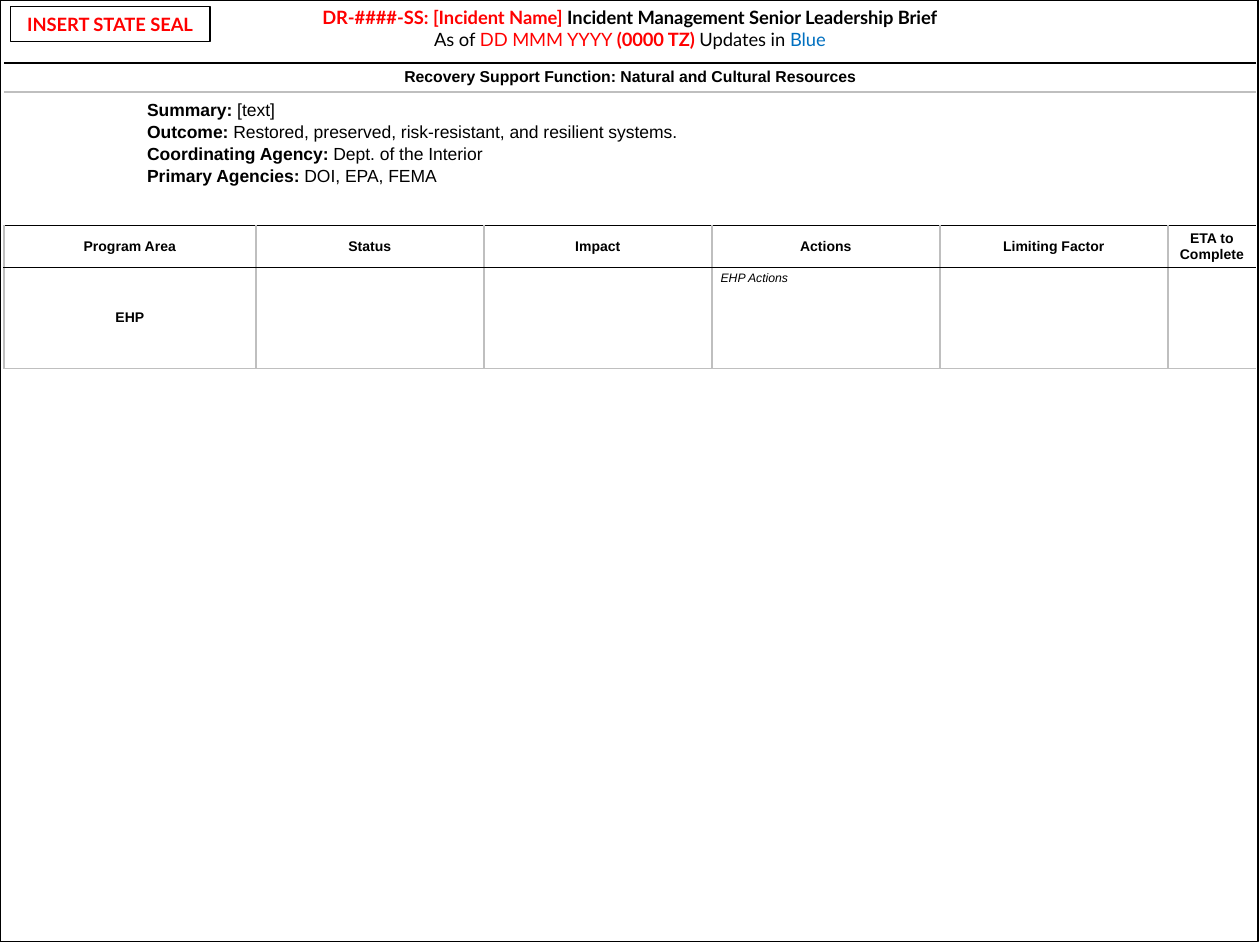
from lxml import etree
from pptx import Presentation
from pptx.dml.color import RGBColor
from pptx.enum import shapes, text
from pptx.oxml import ns
from pptx.util import Pt

BLACK = RGBColor(0x00, 0x00, 0x00)
RED = RGBColor(0xFF, 0x00, 0x00)
BLUE = RGBColor(0x00, 0x70, 0xC0)
GRAY = RGBColor(0xBF, 0xBF, 0xBF)
CENTER = text.PP_ALIGN.CENTER
LEFT = text.PP_ALIGN.LEFT
MIDDLE = text.MSO_ANCHOR.MIDDLE
TOP = text.MSO_ANCHOR.TOP


def write_text(frame, paragraphs, font="Arial", size=10, align=LEFT, anchor=TOP,
               italic=False, spacing=None):
    """Fill a text frame with paragraphs made of (words, bold, color) runs."""
    frame.word_wrap = True
    frame.vertical_anchor = anchor
    for index, runs in enumerate(paragraphs):
        paragraph = frame.add_paragraph() if index else frame.paragraphs[0]
        paragraph.alignment = align
        if spacing:
            paragraph.line_spacing = spacing
        for words, bold, color in runs:
            run = paragraph.add_run()
            run.text = words
            run.font.name = font
            run.font.size = Pt(size)
            run.font.bold = bold
            run.font.italic = italic
            run.font.color.rgb = color


def add_text_box(slide, left, top, width, height, paragraphs, **text_format):
    """Add a text box holding formatted paragraphs."""
    box = slide.shapes.add_textbox(Pt(left), Pt(top), Pt(width), Pt(height))
    write_text(box.text_frame, paragraphs, **text_format)


def add_outline(slide, left, top, width, height, weight):
    """Add an unfilled rectangle with a black outline and return it."""
    shape = slide.shapes.add_shape(
        shapes.MSO_SHAPE.RECTANGLE, Pt(left), Pt(top), Pt(width), Pt(height))
    shape.shadow.inherit = False
    shape.fill.background()
    shape.line.color.rgb = BLACK
    shape.line.width = Pt(weight)
    return shape


def set_borders(cell, left=None, right=None, top=None, bottom=None):
    """Draw one-point borders in the given colors and hide the others."""
    properties = cell._tc.get_or_add_tcPr()
    sides = {"lnL": left, "lnR": right, "lnT": top, "lnB": bottom}
    for position, (tag, color) in enumerate(sides.items()):
        border = etree.Element(ns.qn(f"a:{tag}"), w=str(Pt(1)))
        if color is None:
            etree.SubElement(border, ns.qn("a:noFill"))
        else:
            fill = etree.SubElement(border, ns.qn("a:solidFill"))
            etree.SubElement(fill, ns.qn("a:srgbClr"), val=str(color))
        properties.insert(position, border)


def add_plain_table(slide, left, top, widths, heights):
    """Add a table without fills or banding and return it."""
    table = slide.shapes.add_table(
        len(heights), len(widths), Pt(left), Pt(top),
        Pt(sum(widths)), Pt(sum(heights))).table
    table.first_row = table.horz_banding = False
    for column, width in zip(table.columns, widths):
        column.width = Pt(width)
    for row, height in zip(table.rows, heights):
        row.height = Pt(height)
    for cell in table.iter_cells():
        cell.fill.background()
        cell.margin_left = cell.margin_right = Pt(5)
        cell.margin_top = cell.margin_bottom = Pt(2.2)
    return table


def write_cell(cell, words, size, bold=True, italic=False, align=CENTER, anchor=MIDDLE):
    """Write one line of black text in a table cell."""
    cell.vertical_anchor = anchor
    write_text(cell.text_frame, [[(words, bold, BLACK)]], size=size,
               italic=italic, align=align, anchor=anchor)


def add_banner(slide):
    """Add the one-cell table that names the support function."""
    cell = add_plain_table(slide, 2.2, 36, [715.7], [16.6]).cell(0, 0)
    write_cell(cell, "Recovery Support Function: Natural and Cultural Resources", 9)
    set_borders(cell, top=BLACK, bottom=GRAY)


def add_program_table(slide):
    """Add the table of program areas."""
    headings = ["Program Area", "Status", "Impact", "Actions",
                "Limiting Factor", "ETA to Complete"]
    table = add_plain_table(slide, 2.2, 128.9, [144] + [130.3] * 4 + [50.4], [24, 57.6])
    for column, heading in enumerate(headings):
        write_cell(table.cell(0, column), heading, 8)
        right = None if heading == headings[-1] else GRAY
        for row, bottom in enumerate((BLACK, GRAY)):
            set_borders(table.cell(row, column), GRAY, right, BLACK, bottom)
    write_cell(table.cell(1, 0), "EHP", 8)
    write_cell(table.cell(1, 3), "EHP Actions", 7, bold=False, italic=True,
               align=LEFT, anchor=TOP)


def main():
    """Build the leadership brief slide."""
    presentation = Presentation()
    presentation.slide_width, presentation.slide_height = Pt(720), Pt(540)
    slide = presentation.slides.add_slide(presentation.slide_layouts[6])

    add_text_box(slide, 0, 0, 720, 32.4, [
        [("DR-####-SS: [Incident Name] ", True, RED),
         ("Incident Management Senior Leadership Brief", True, BLACK)],
        [("As of ", False, BLACK), ("DD MMM YYYY ", False, RED),
         ("(0000 TZ) ", True, RED), ("Updates in ", False, BLACK),
         ("Blue", False, BLUE)],
    ], font="Lato", size=10.5, align=CENTER)
    seal = add_outline(slide, 6, 3.6, 114, 20.2, 0.75)
    write_text(seal.text_frame, [[("INSERT STATE SEAL", True, RED)]],
               font="Lato", size=10.5, align=CENTER, anchor=MIDDLE)
    add_outline(slide, 0, 0, 719, 538, 1)
    add_banner(slide)

    summary = {
        "Summary: ": "[text]",
        "Outcome: ": "Restored, preserved, risk-resistant, and resilient systems.",
        "Coordinating Agency: ": "Dept. of the Interior",
        "Primary Agencies: ": "DOI, EPA, FEMA",
    }
    add_text_box(slide, 77, 52.6, 608.4, 55.4, [
        [(label, True, BLACK), (detail, False, BLACK)]
        for label, detail in summary.items()
    ], spacing=1.05)
    add_program_table(slide)
    presentation.save("out.pptx")


if __name__ == "__main__":
    main()
